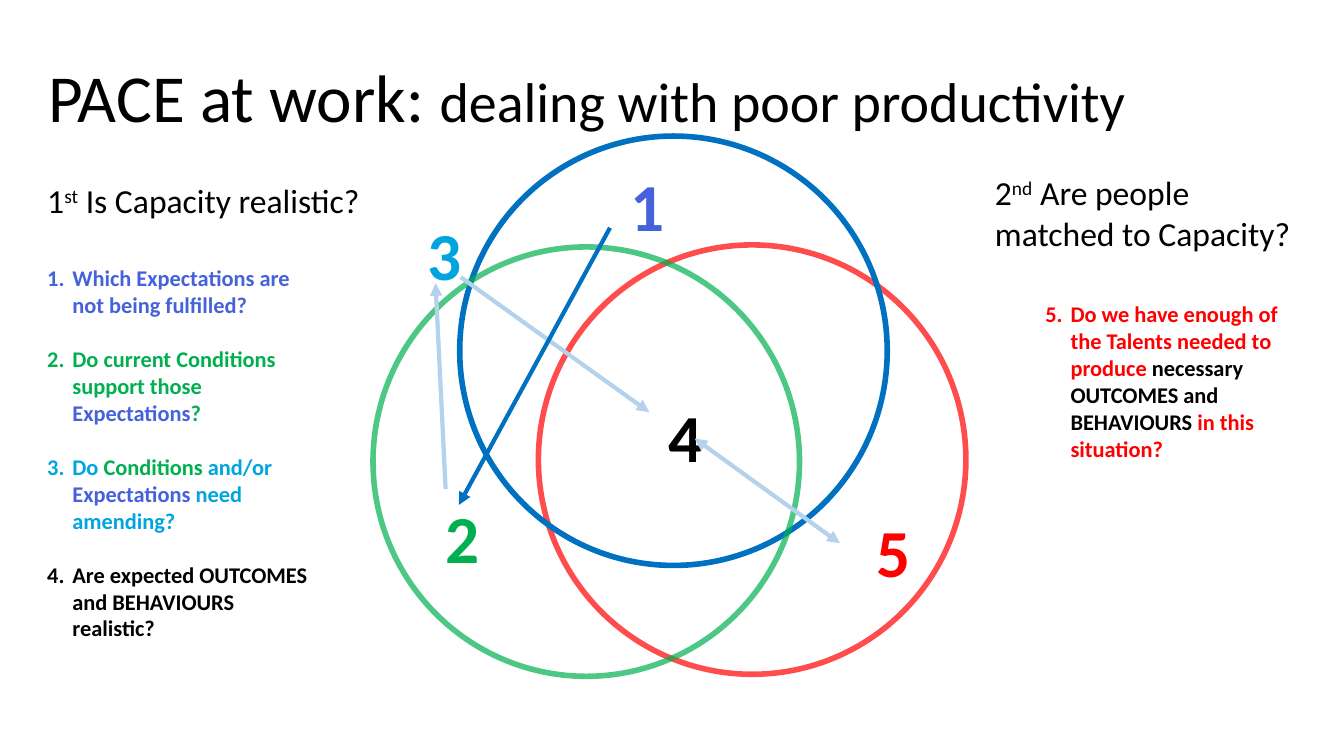
from dataclasses import dataclass

from lxml import etree
from pptx import Presentation
from pptx.dml.color import RGBColor
from pptx.enum.shapes import MSO_CONNECTOR, MSO_SHAPE
from pptx.enum.text import MSO_AUTO_SIZE, PP_ALIGN
from pptx.oxml.ns import qn
from pptx.slide import Slide
from pptx.util import Emu, Pt

OVAL = MSO_SHAPE.OVAL
STRAIGHT = MSO_CONNECTOR.STRAIGHT
FIT_TEXT = MSO_AUTO_SIZE.SHAPE_TO_FIT_TEXT
LEFT, CENTER = PP_ALIGN.LEFT, PP_ALIGN.CENTER

EMU_PER_PX = 9144  # 100 px to the inch
FONT = "Calibri"
NUMBER_INDENT = 25
QUESTION_GAP = Pt(19.5)
COLORS = {
    "black": "000000",
    "red": "FF0000",
    "blue": "0070C0",
    "green": "00B050",
    "indigo": "4562DB",
    "cyan": "00A4DE",
    "pale": "B5D2EC",
}


@dataclass(frozen=True)
class Box:
    left: int
    top: int
    width: int
    height: int


@dataclass(frozen=True)
class Run:
    text: str
    size: int
    color: str = "black"
    bold: bool = False
    superscript: bool = False


@dataclass(frozen=True)
class Paragraph:
    runs: list[Run]
    number: int = 0
    align: PP_ALIGN = LEFT


@dataclass(frozen=True)
class TextBlock:
    box: Box
    paragraphs: list[Paragraph]
    wrap: bool = True


@dataclass(frozen=True)
class Circle:
    box: Box
    color: str
    opacity: int = 100


@dataclass(frozen=True)
class Arrow:
    start: tuple[int, int]
    end: tuple[int, int]
    color: str = "pale"
    double: bool = False


def px(length: int) -> Emu:
    return Emu(length * EMU_PER_PX)


def frame(box: Box) -> tuple[Emu, ...]:
    return px(box.left), px(box.top), px(box.width), px(box.height)


def rgb(color: str) -> RGBColor:
    return RGBColor.from_string(COLORS[color])


def heading(box: Box, ordinal: str, suffix: str, rest: str, wrap: bool = True) -> TextBlock:
    runs = [Run(ordinal, 24), Run(suffix, 24, superscript=True), Run(rest, 24)]
    return TextBlock(box, [Paragraph(runs)], wrap)


def question(number: int, *parts: tuple[str, str]) -> Paragraph:
    return Paragraph([Run(text, 16, color, bold=True) for text, color in parts], number)


def digit(text: str, color: str, left: int, top: int, width: int) -> TextBlock:
    run = Run(text, 48, color, bold=True)
    return TextBlock(Box(left, top, width, 91), [Paragraph([run], align=CENTER)])


CIRCLES = [
    Circle(Box(534, 243, 424, 426), "red", 70),
    Circle(Box(456, 135, 424, 426), "blue"),
    Circle(Box(370, 245, 423, 426), "green", 70),
]

TEXT_BLOCKS = [
    TextBlock(Box(38, 50, 1232, 91), [Paragraph([
        Run("PACE at work: ", 48), Run("dealing with poor productivity", 40),
    ])]),
    heading(Box(37, 174, 335, 50), "1", "st", " Is Capacity realistic?", wrap=False),
    TextBlock(Box(37, 257, 279, 441), [
        question(1, ("Which Expectations are not being fulfilled?", "indigo")),
        question(2, ("Do current Conditions support those ", "green"),
                 ("Expectations", "indigo"), ("?", "green")),
        question(3, ("Do ", "cyan"), ("Conditions", "green"), (" and/or ", "cyan"),
                 ("Expectations", "indigo"), (" need amending?", "cyan")),
        question(4, ("Are expected OUTCOMES and BEHAVIOURS realistic?", "black")),
    ]),
    digit("3", "cyan", 414, 207, 42),
    digit("1", "indigo", 615, 158, 29),
    digit("2", "green", 432, 487, 24),
    digit("4", "black", 653, 387, 26),
    TextBlock(Box(1027, 293, 263, 279), [
        question(5, ("Do we have enough of the Talents needed to produce ", "red"),
                 ("necessary OUTCOMES and BEHAVIOURS ", "black"),
                 ("in this situation?", "red")),
    ]),
    heading(Box(977, 166, 324, 91), "2", "nd", " Are people matched to Capacity?"),
    digit("5", "red", 862, 501, 17),
]

ARROWS = [
    Arrow((442, 485), (432, 281)),
    Arrow((457, 275), (644, 409)),
    Arrow((605, 226), (455, 501), "blue"),
    Arrow((689, 435), (833, 539), double=True),
]


def add_circle(slide: Slide, circle: Circle) -> None:
    shape = slide.shapes.add_shape(OVAL, *frame(circle.box))
    shape.shadow.inherit = False
    shape.fill.background()
    shape.line.width = Pt(4)
    shape.line.color.rgb = rgb(circle.color)
    if circle.opacity < 100:
        color_element = next(shape.line._get_or_add_ln().iter(qn("a:srgbClr")))
        etree.SubElement(color_element, qn("a:alpha"), val=str(circle.opacity * 1000))


def number_paragraph(paragraph, number: int) -> None:
    """Give the paragraph a hanging automatic number."""
    properties = paragraph._p.get_or_add_pPr()
    properties.set("marL", str(px(NUMBER_INDENT)))
    properties.set("indent", str(-px(NUMBER_INDENT)))
    etree.SubElement(properties, qn("a:buFont"), typeface="+mj-lt")
    etree.SubElement(properties, qn("a:buAutoNum"), type="arabicPeriod", startAt=str(number))


def add_text(slide: Slide, block: TextBlock) -> None:
    text_frame = slide.shapes.add_textbox(*frame(block.box)).text_frame
    text_frame.word_wrap = block.wrap
    text_frame.auto_size = FIT_TEXT
    for index, content in enumerate(block.paragraphs):
        paragraph = text_frame.add_paragraph() if index else text_frame.paragraphs[0]
        paragraph.alignment = content.align
        if index:
            paragraph.space_before = QUESTION_GAP
        if content.number:
            number_paragraph(paragraph, content.number)
        for part in content.runs:
            run = paragraph.add_run()
            run.text = part.text
            run.font.name = FONT
            run.font.size = Pt(part.size)
            run.font.bold = part.bold
            run.font.color.rgb = rgb(part.color)
            if part.superscript:
                run.font._element.set("baseline", "30000")


def add_arrow(slide: Slide, arrow: Arrow) -> None:
    points = [px(value) for value in (*arrow.start, *arrow.end)]
    connector = slide.shapes.add_connector(STRAIGHT, *points)
    connector.line.width = Pt(3)
    connector.line.color.rgb = rgb(arrow.color)
    line = connector.line._get_or_add_ln()
    for tag in ("a:headEnd", "a:tailEnd") if arrow.double else ("a:tailEnd",):
        etree.SubElement(line, qn(tag), type="triangle")
    etree.SubElement(connector._element.spPr, qn("a:effectLst"))


def main() -> None:
    presentation = Presentation()
    presentation.slide_width, presentation.slide_height = px(1333), px(750)
    slide = presentation.slides.add_slide(presentation.slide_layouts[6])
    for circle in CIRCLES:
        add_circle(slide, circle)
    for block in TEXT_BLOCKS:
        add_text(slide, block)
    for arrow in ARROWS:
        add_arrow(slide, arrow)
    presentation.save("out.pptx")


if __name__ == "__main__":
    main()
